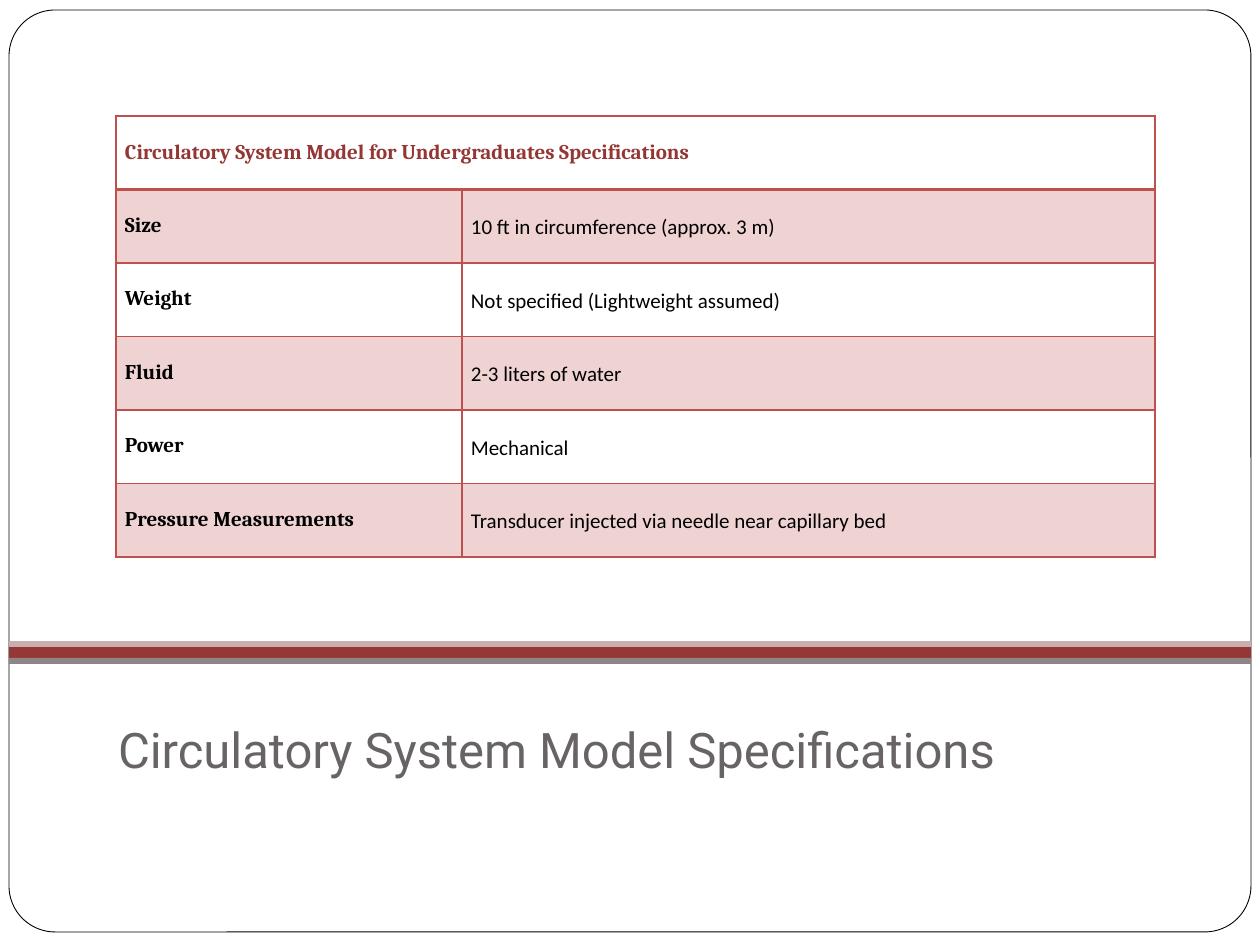
import pptx
import pptx.util
import pptx.dml.color
import pptx.enum.shapes
import pptx.enum.text
import pptx.oxml
import pptx.oxml.ns

COLORS = {
    "white": "FFFFFF",
    "black": "000000",
    "red": "953735",
    "rose": "C8AEAE",
    "taupe": "918485",
    "title": "696464",
    "heading": "943634",
    "border": "C0504D",
    "band": "EFD3D2",
}
HEADING = "Circulatory System Model for Undergraduates Specifications"
SPECS = [
    ("Size", "10 ft in circumference (approx. 3 m)"),
    ("Weight", "Not specified (Lightweight assumed)"),
    ("Fluid", "2-3 liters of water"),
    ("Power", "Mechanical"),
    ("Pressure Measurements", "Transducer injected via needle near capillary bed"),
]
SHAPES = pptx.enum.shapes.MSO_SHAPE
MIDDLE = pptx.enum.text.MSO_ANCHOR.MIDDLE
LEFT = pptx.enum.text.PP_ALIGN.LEFT


def px(n):
    return pptx.util.Emu(round(n * 914400 / 126))


def rgb(name):
    return pptx.dml.color.RGBColor.from_string(COLORS[name])


class SlideBuilder:
    def __init__(self, slide):
        self.s = slide

    def style(self, p, font, size, color, bold=False):
        p.alignment = LEFT
        p.font.name = font
        p.font.size = pptx.util.Pt(size)
        p.font.bold = bold
        p.font.color.rgb = rgb(color)

    def shape(self, kind, x, y, w, h, fill, line=None):
        sp = self.s.shapes.add_shape(kind, px(x), px(y), px(w), px(h))
        sp.shadow.inherit = False
        sp.fill.solid()
        sp.fill.fore_color.rgb = rgb(fill)
        if line:
            sp.line.color.rgb = rgb(line)
            sp.line.width = pptx.util.Pt(0.5)
        else:
            sp.line.fill.background()
        return sp

    def title(self, text, x, y, w, h):
        sp = self.s.shapes.title
        sp.element.getparent().append(sp.element)
        sp.left, sp.top, sp.width, sp.height = px(x), px(y), px(w), px(h)
        tf = sp.text_frame
        tf.text = text
        tf.word_wrap = True
        tf.vertical_anchor = MIDDLE
        tf.margin_left = tf.margin_right = tf.margin_bottom = px(13)
        tf.margin_top = px(6)
        self.style(tf.paragraphs[0], "Roboto", 28, "title")

    def borders(self, cell, top, bottom):
        tcPr = cell._tc.get_or_add_tcPr()
        for side, width in (("L", 1), ("R", 1), ("T", top), ("B", bottom)):
            tcPr.append(pptx.oxml.parse_xml(
                f'<a:ln{side} {pptx.oxml.ns.nsdecls("a")} w="{pptx.util.Pt(width)}">'
                f'<a:solidFill><a:srgbClr val="{COLORS["border"]}"/></a:solidFill>'
                f'</a:ln{side}>'))

    def cell(self, cell, text, fill, font, color, bold, top=1, bottom=1):
        self.borders(cell, top, bottom)
        cell.fill.solid()
        cell.fill.fore_color.rgb = rgb(fill)
        cell.margin_left = cell.margin_right = px(9)
        cell.margin_top = cell.margin_bottom = 0
        p = cell.text_frame.paragraphs[0]
        p.text = text
        p.line_spacing = 2.0
        self.style(p, font, 12, color, bold)

    def table(self, heading, rows, x, y, widths, row_h):
        n = len(rows) + 1
        table = self.s.shapes.add_table(
            n, len(widths), px(x), px(y), px(sum(widths)), px(n * row_h)).table
        table.first_row = table.horz_banding = False
        for col, w in zip(table.columns, widths):
            col.width = px(w)
        for row in table.rows:
            row.height = px(row_h)
        table.cell(0, 0).merge(table.cell(0, 1))
        for c, text in enumerate((heading, "")):
            self.cell(table.cell(0, c), text, "white", "Cambria", "heading", True, bottom=2.25)
        for r, (label, value) in enumerate(rows, 1):
            fill = "band" if r % 2 else "white"
            top = 2.25 if r == 1 else 1
            self.cell(table.cell(r, 0), label, fill, "Cambria", "black", True, top)
            self.cell(table.cell(r, 1), value, fill, "Calibri", "black", False, top)


def main():
    prs = pptx.Presentation()
    prs.slide_width, prs.slide_height = px(1260), px(945)
    b = SlideBuilder(prs.slides.add_slide(prs.slide_layouts[5]))
    frame = b.shape(SHAPES.ROUNDED_RECTANGLE, 9, 10, 1242, 922, "white", "black")
    frame.adjustments[0] = 0.05
    for y, h, color in ((645, 13, "red"), (641, 6, "rose"), (658, 6, "taupe")):
        b.shape(SHAPES.RECTANGLE, 9, y, 1242, h, color)
    b.title("Circulatory System Model Specifications", 105, 716, 1008, 72)
    b.table(HEADING, SPECS, 116, 116, (346, 693), 73.5)
    prs.save("out.pptx")


if __name__ == "__main__":
    main()
